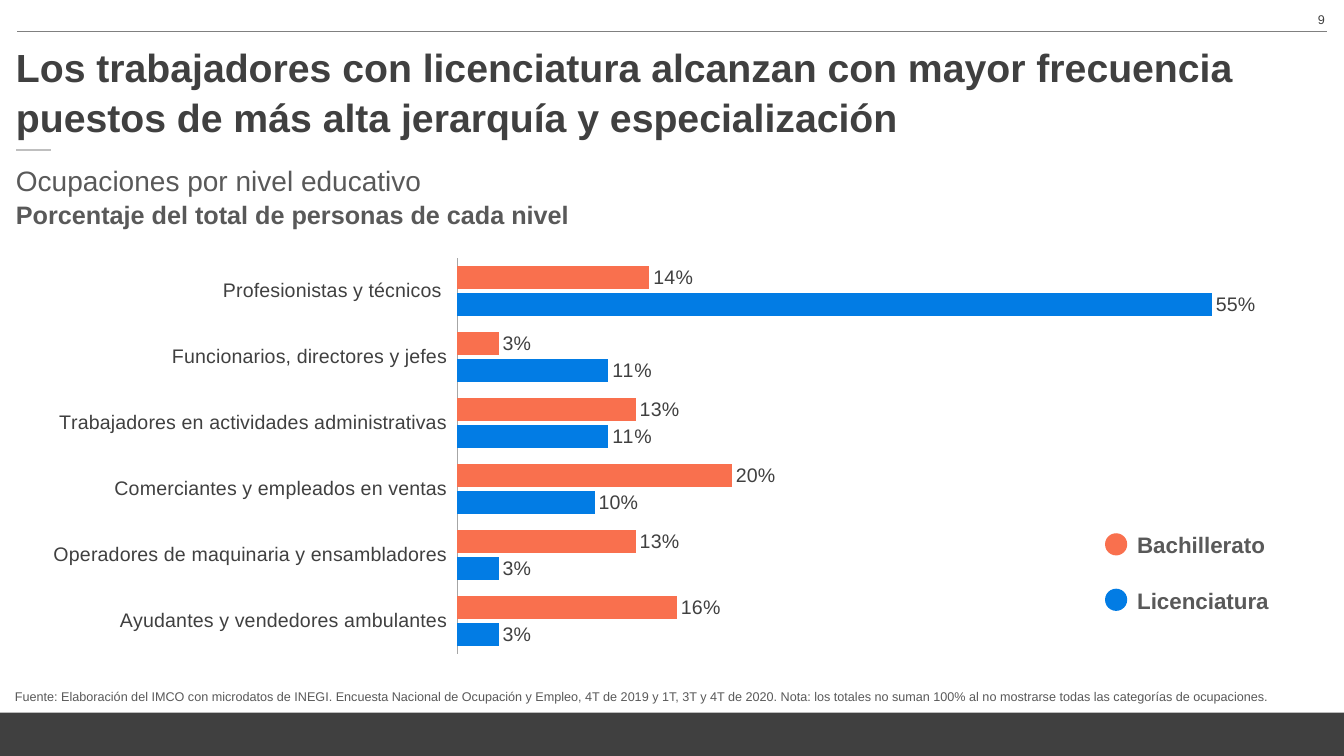
from dataclasses import dataclass

from lxml import etree
from pptx import Presentation
from pptx.chart.data import CategoryChartData
from pptx.dml.color import RGBColor
from pptx.enum.chart import XL_CHART_TYPE as CT, XL_LABEL_POSITION as LP, XL_TICK_LABEL_POSITION as TLP, XL_TICK_MARK as TM
from pptx.enum.shapes import MSO_CONNECTOR as CONN, MSO_SHAPE as SHAPE
from pptx.enum.text import MSO_ANCHOR as ANCHOR, PP_ALIGN as ALIGN
from pptx.oxml import parse_xml
from pptx.oxml.ns import nsdecls, qn
from pptx.util import Inches, Pt


@dataclass(frozen=True)
class Theme:
    font: str = "Arial"
    dark: str = "404040"
    text: str = "595959"
    rule: str = "808080"
    axis: str = "A6A6A6"
    accent: str = "BFBFBF"
    bachillerato: str = "F9704E"
    licenciatura: str = "027CE4"
    title: float = 28
    subtitle: float = 20
    unit: float = 18
    legend: float = 16
    label: float = 14
    small: float = 9
    leading: float = 1.05


CATEGORIES = [
    "Profesionistas y técnicos ",
    "Funcionarios, directores y jefes",
    "Trabajadores en actividades administrativas",
    "Comerciantes y empleados en ventas",
    "Operadores de maquinaria y ensambladores",
    "Ayudantes y vendedores ambulantes",
]
BACHILLERATO = (0.14, 0.03, 0.13, 0.2, 0.13, 0.16)
LICENCIATURA = (0.55, 0.11, 0.11, 0.1, 0.03, 0.03)
PLOT = {"x": 0.328, "y": 0.005, "w": 0.672, "h": 0.977}


class Deck:
    """Holds the theme and the current slide, and draws each kind of element."""

    def __init__(self, theme):
        self.t = theme
        self.prs = Presentation()
        self.prs.slide_width, self.prs.slide_height = Inches(13.33), Inches(7.5)
        self.s = self.prs.slides.add_slide(self.prs.slide_layouts[6])

    def style(self, font, size, color, bold=False):
        font.name, font.size, font.bold = self.t.font, Pt(size), bold
        font.color.rgb = RGBColor.from_string(color)

    def text(self, box, lines, color, align=ALIGN.LEFT, anchor=ANCHOR.TOP,
             wrap=True, leading=1.0, gap=0):
        tf = self.s.shapes.add_textbox(*map(Inches, box)).text_frame
        tf.word_wrap, tf.vertical_anchor = wrap, anchor
        for i, (words, size, bold) in enumerate(lines):
            p = tf.add_paragraph() if i else tf.paragraphs[0]
            p.alignment, p.line_spacing = align, leading
            p.space_before = Pt(gap if i else 0)
            r = p.add_run()
            r.text = words
            self.style(r.font, size, color, bold)

    def shape(self, kind, box, color):
        sp = self.s.shapes.add_shape(kind, *map(Inches, box))
        sp.shadow.inherit = False
        sp.fill.solid()
        sp.fill.fore_color.rgb = RGBColor.from_string(color)
        sp.line.fill.background()

    def rule(self, x1, x2, y, color, width):
        c = self.s.shapes.add_connector(CONN.STRAIGHT, *map(Inches, (x1, y, x2, y)))
        c.line.color.rgb = RGBColor.from_string(color)
        c.line.width = Pt(width)
        etree.SubElement(c._element.spPr, qn("a:effectLst"))

    def bars(self, box, categories, series):
        data = CategoryChartData(number_format="0%")
        data.categories = categories
        for name, values, _ in series:
            data.add_series(name, values)
        chart = self.s.shapes.add_chart(CT.BAR_CLUSTERED, *map(Inches, box), data).chart
        chart.has_legend = chart.has_title = False
        self.style(chart.font, self.t.unit, self.t.dark)

        cat, val = chart.category_axis, chart.value_axis
        cat.reverse_order = True
        cat.major_tick_mark = cat.minor_tick_mark = TM.NONE
        cat.tick_label_position = TLP.LOW
        cat.format.line.color.rgb = RGBColor.from_string(self.t.axis)
        cat.format.line.width = Pt(1)
        self.style(cat.tick_labels.font, self.t.label, self.t.dark)
        val.minimum_scale, val.maximum_scale, val.major_unit = 0, 0.6, 0.2
        val.has_major_gridlines = val.visible = False

        plot = chart.plots[0]
        plot.gap_width, plot.overlap, plot.vary_by_categories = 72, -18, False
        for ser, (_, _, color) in zip(plot.series, series):
            ser.format.fill.solid()
            ser.format.fill.fore_color.rgb = RGBColor.from_string(color)
            labels = ser.data_labels
            labels.show_value, labels.position = True, LP.OUTSIDE_END
            labels.number_format, labels.number_format_is_linked = "0%", False
            self.style(labels.font, self.t.label, self.t.dark)
        self.place_plot(chart)

    def place_plot(self, chart):
        area = chart._chartSpace.chart.plotArea
        for old in area.findall(qn("c:layout")):
            area.remove(old)
        modes = '<c:layoutTarget val="inner"/><c:xMode val="edge"/><c:yMode val="edge"/>'
        sizes = "".join(f'<c:{k} val="{v}"/>' for k, v in PLOT.items())
        area.insert(0, parse_xml(
            f'<c:layout {nsdecls("c")}><c:manualLayout>{modes}{sizes}'
            '</c:manualLayout></c:layout>'))


def main():
    t = Theme()
    deck = Deck(t)
    deck.shape(SHAPE.RECTANGLE, (0, 7.07, 13.33, 0.43), t.dark)
    deck.rule(0.17, 13.16, 0.31, t.rule, 0.75)
    deck.text((10.24, 0.07, 3, 0.4), [("9", t.small, False)], t.dark, align=ALIGN.RIGHT)
    deck.text((0.06, 0.36, 13.18, 0.6), [(
        "Los trabajadores con licenciatura alcanzan con mayor frecuencia "
        "puestos de más alta jerarquía y especialización", t.title, True)],
        t.dark, leading=t.leading)
    deck.rule(0.16, 0.51, 1.49, t.accent, 1.5)
    deck.text((0.06, 1.56, 7.43, 1.08), [
        ("Ocupaciones por nivel educativo", t.subtitle, False),
        ("Porcentaje del total de personas de cada nivel", t.unit, True)],
        t.text, leading=t.leading)

    series = [("Bachillerato", BACHILLERATO, t.bachillerato),
              ("Licenciatura", LICENCIATURA, t.licenciatura)]
    deck.bars((0.53, 2.54, 12.17, 4.02), CATEGORIES, series)
    for i, (_, _, color) in enumerate(series):
        deck.shape(SHAPE.OVAL, (10.96, 5.29 + 0.55 * i, 0.22, 0.22), color)
    deck.text((11.18, 5.21, 1.52, 0.91), [(name, t.legend, True) for name, _, _ in series],
              t.text, wrap=False, leading=t.leading, gap=19.3)

    deck.text((0.05, 6.76, 12.99, 0.27), [(
        "Fuente: Elaboración del IMCO con microdatos de INEGI. Encuesta Nacional de "
        "Ocupación y Empleo, 4T de 2019 y 1T, 3T y 4T de 2020. Nota: los totales no suman "
        "100% al no mostrarse todas las categorías de ocupaciones.", t.small, False)],
        t.text, anchor=ANCHOR.BOTTOM)
    deck.prs.save("out.pptx")


if __name__ == "__main__":
    main()
